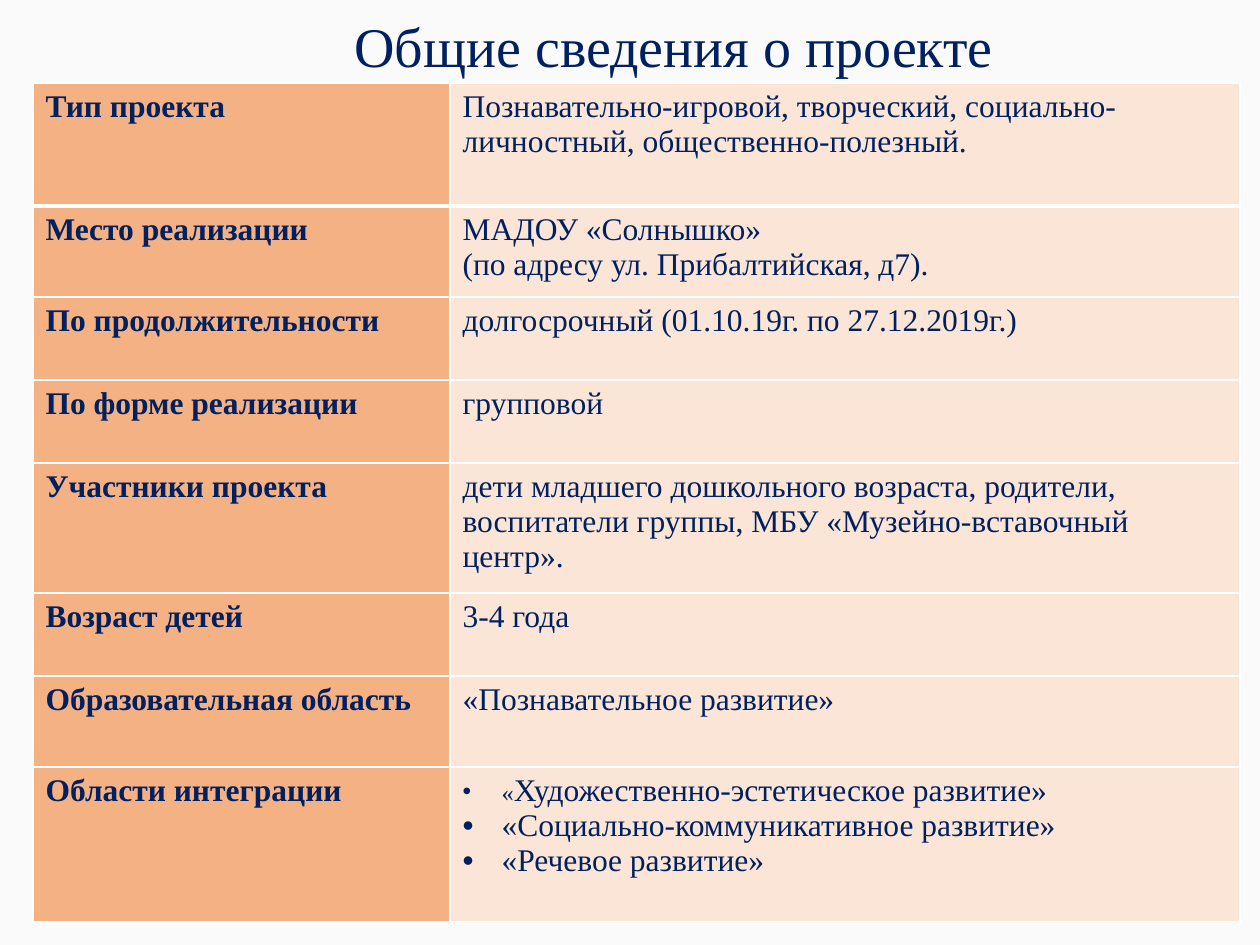
from lxml.etree import SubElement
from pptx import Presentation
from pptx.dml.color import RGBColor
from pptx.enum.text import MSO_ANCHOR, PP_ALIGN
from pptx.oxml.ns import qn
from pptx.util import Pt

PX = 914400 // 126
FONT = "Times New Roman"
COLORS = {"back": "FAFAFA", "text": "002060", "label": "F4B183",
          "value": "FBE5D6", "border": "FFFFFF"}

TITLE = "Общие сведения о проекте"
TITLE_BOX = (131, 0, 1086, 98)
TABLE_LEFT, TABLE_TOP = 33, 83
COLUMNS = (417, 790)
BULLET_INDENT = 39

ROWS = [
    (123, "Тип проекта",
     ["Познавательно-игровой, творческий, социально-личностный, общественно-полезный."]),
    (91, "Место реализации",
     ["МАДОУ «Солнышко»", "(по адресу ул. Прибалтийская, д7)."]),
    (83, "По продолжительности", ["долгосрочный (01.10.19г. по 27.12.2019г.)"]),
    (83, "По форме реализации", ["групповой"]),
    (130, "Участники проекта",
     ["дети младшего дошкольного возраста, родители, воспитатели группы, "
      "МБУ «Музейно-вставочный центр»."]),
    (83, "Возраст детей", ["3-4 года"]),
    (91, "Образовательная область", ["«Познавательное развитие»"]),
    (155, "Области интеграции",
     [[("«", 14), ("Художественно-эстетическое развитие»", 18)],
      "«Социально-коммуникативное развитие»",
      "«Речевое развитие»"]),
]
BULLETED = {"Области интеграции"}


def px(n):
    return n * PX


def rgb(name):
    return RGBColor.from_string(COLORS[name])


def write(tf, paragraphs, size=18, bold=False, align=PP_ALIGN.LEFT, spacing=None, bullet=False):
    for i, runs in enumerate(paragraphs):
        p = tf.add_paragraph() if i else tf.paragraphs[0]
        p.alignment = align
        if spacing:
            p.line_spacing = spacing
        if bullet:
            pPr = p._p.get_or_add_pPr()
            pPr.set("marL", str(px(BULLET_INDENT)))
            pPr.set("indent", str(-px(BULLET_INDENT)))
            SubElement(pPr, qn("a:buFont"), typeface="Arial")
            SubElement(pPr, qn("a:buChar"), char="•")
        for text, run_size in [(runs, size)] if isinstance(runs, str) else runs:
            r = p.add_run()
            r.text = text
            r.font.name = FONT
            r.font.size = Pt(run_size)
            r.font.bold = bold
            r.font.color.rgb = rgb("text")


def set_borders(cell, **widths):
    tcPr = cell._tc.get_or_add_tcPr()
    for side in "LRTB":
        ln = SubElement(tcPr, qn(f"a:ln{side}"), w=str(Pt(widths.get(side, 1))))
        fill = SubElement(ln, qn("a:solidFill"))
        SubElement(fill, qn("a:srgbClr"), val=COLORS["border"])


prs = Presentation()
prs.slide_width, prs.slide_height = px(1260), px(945)
s = prs.slides.add_slide(prs.slide_layouts[6])
s.background.fill.solid()
s.background.fill.fore_color.rgb = rgb("back")

tf = s.shapes.add_textbox(*map(px, TITLE_BOX)).text_frame
tf.word_wrap = True
tf.vertical_anchor = MSO_ANCHOR.MIDDLE
write(tf, [TITLE], size=32, align=PP_ALIGN.CENTER, spacing=0.9)

height = sum(row[0] for row in ROWS)
table = s.shapes.add_table(len(ROWS), len(COLUMNS), px(TABLE_LEFT), px(TABLE_TOP),
                           px(sum(COLUMNS)), px(height)).table
for column, width in zip(table.columns, COLUMNS):
    column.width = px(width)

for i, (row_height, label, values) in enumerate(ROWS):
    table.rows[i].height = px(row_height)
    for j, (kind, paragraphs) in enumerate((("label", [label]), ("value", values))):
        cell = table.cell(i, j)
        set_borders(cell, T=3 if i == 1 else 1, B=3 if i == 0 else 1)
        cell.fill.solid()
        cell.fill.fore_color.rgb = rgb(kind)
        write(cell.text_frame, paragraphs, bold=kind == "label",
              bullet=kind == "value" and label in BULLETED)

prs.save("out.pptx")
